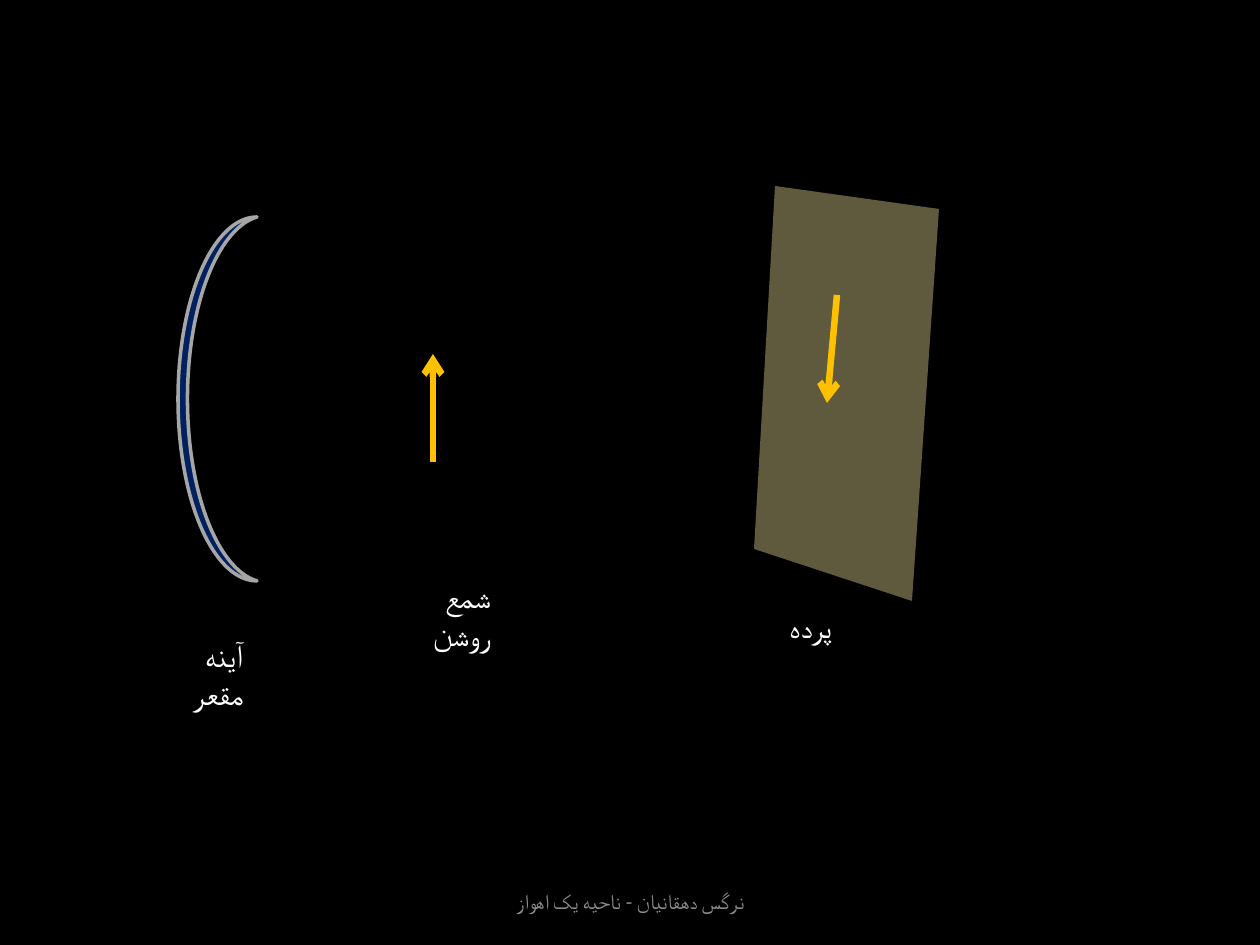
from dataclasses import dataclass

from lxml.etree import SubElement
from pptx import Presentation
from pptx.dml.color import RGBColor
from pptx.enum.shapes import MSO_CONNECTOR, MSO_SHAPE
from pptx.enum.text import MSO_ANCHOR, PP_ALIGN
from pptx.oxml.ns import qn
from pptx.slide import Slide
from pptx.util import Pt

SCALE = 914400 / 126
FONT = "Calibri"
BLACK = RGBColor(0x00, 0x00, 0x00)
WHITE = RGBColor(0xFF, 0xFF, 0xFF)
GREY = RGBColor(0x8C, 0x8C, 0x8C)
SILVER = RGBColor(0xA6, 0xA6, 0xA6)
NAVY = RGBColor(0x00, 0x20, 0x60)
GOLD = RGBColor(0xFF, 0xC0, 0x00)
OLIVE = RGBColor(0x5F, 0x59, 0x3D)


@dataclass(frozen=True)
class Label:
    text: str
    left: int
    top: int
    width: int
    height: int
    size: int = 18
    color: RGBColor = WHITE
    align: PP_ALIGN = PP_ALIGN.RIGHT
    anchor: MSO_ANCHOR = MSO_ANCHOR.TOP


@dataclass(frozen=True)
class Arrow:
    start: tuple[int, int]
    end: tuple[int, int]


LABELS = [
    Label("آینه مقعر", 156, 630, 100, 89),
    Label("شمع روشن", 391, 571, 112, 89),
    Label("پرده", 762, 601, 82, 50),
    Label("نرگس دهقانیان - ناحیه یک اهواز", 431, 876, 399, 50,
          12, GREY, PP_ALIGN.CENTER, MSO_ANCHOR.MIDDLE),
]
ARROWS = [Arrow((433, 462), (433, 354)), Arrow((837, 295), (827, 403))]
SCREEN = [(775, 186), (939, 209), (912, 601), (754, 549)]


def px(*values: int) -> list[int]:
    return [round(value * SCALE) for value in values]


def draw_mirror(slide: Slide) -> None:
    moon = slide.shapes.add_shape(MSO_SHAPE.MOON, *px(178, 217, 79, 364))
    moon.adjustments[0] = 0.12
    moon.shadow.inherit = False
    moon.fill.solid()
    moon.fill.fore_color.rgb = NAVY
    moon.line.color.rgb = SILVER
    moon.line.width = Pt(2)


def draw_screen(slide: Slide) -> None:
    path = slide.shapes.build_freeform(*SCREEN[0], scale=SCALE)
    path.add_line_segments(SCREEN[1:], close=True)
    sheet = path.convert_to_shape()
    sheet.shadow.inherit = False
    sheet.fill.solid()
    sheet.fill.fore_color.rgb = OLIVE
    sheet.line.fill.background()


def draw_arrow(slide: Slide, arrow: Arrow) -> None:
    line = slide.shapes.add_connector(
        MSO_CONNECTOR.STRAIGHT, *px(*arrow.start, *arrow.end))
    line.line.color.rgb = GOLD
    line.line.width = Pt(3.75)
    SubElement(line.line._get_or_add_ln(), qn("a:tailEnd"), type="arrow")
    SubElement(line._element.spPr, qn("a:effectLst"))


def draw_label(slide: Slide, label: Label) -> None:
    box = slide.shapes.add_textbox(
        *px(label.left, label.top, label.width, label.height))
    frame = box.text_frame
    frame.word_wrap = True
    frame.vertical_anchor = label.anchor
    frame.text = label.text
    para = frame.paragraphs[0]
    para.alignment = label.align
    para._p.get_or_add_pPr().set("rtl", "1")
    font = para.runs[0].font
    font.size = Pt(label.size)
    font.color.rgb = label.color
    font.name = FONT
    SubElement(font._element, qn("a:cs"), typeface=FONT)


def main() -> None:
    deck = Presentation()
    deck.slide_width, deck.slide_height = px(1260, 945)
    slide = deck.slides.add_slide(deck.slide_layouts[6])
    slide.background.fill.solid()
    slide.background.fill.fore_color.rgb = BLACK
    draw_mirror(slide)
    draw_screen(slide)
    for arrow in ARROWS:
        draw_arrow(slide, arrow)
    for label in LABELS:
        draw_label(slide, label)
    deck.save("out.pptx")


if __name__ == "__main__":
    main()
